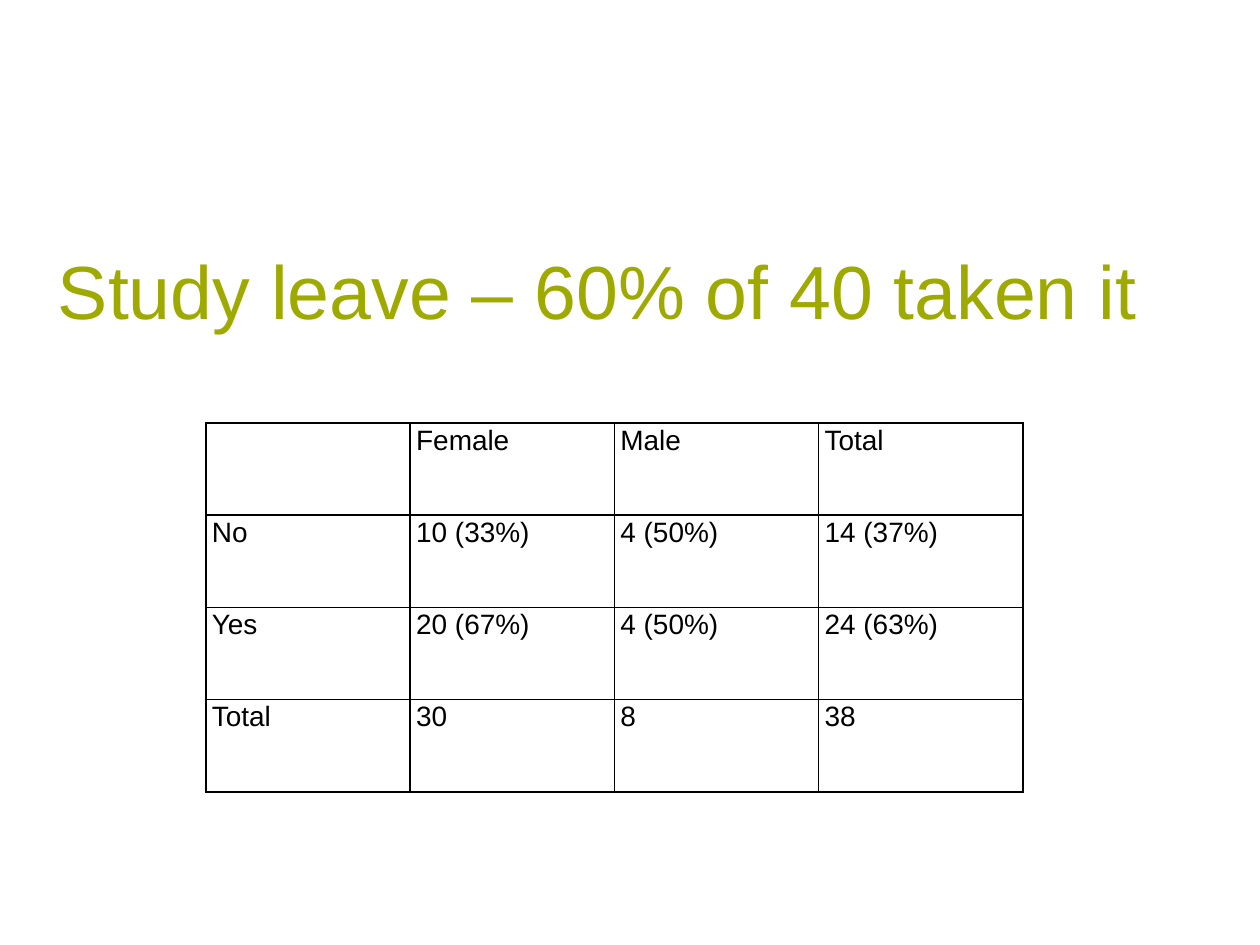
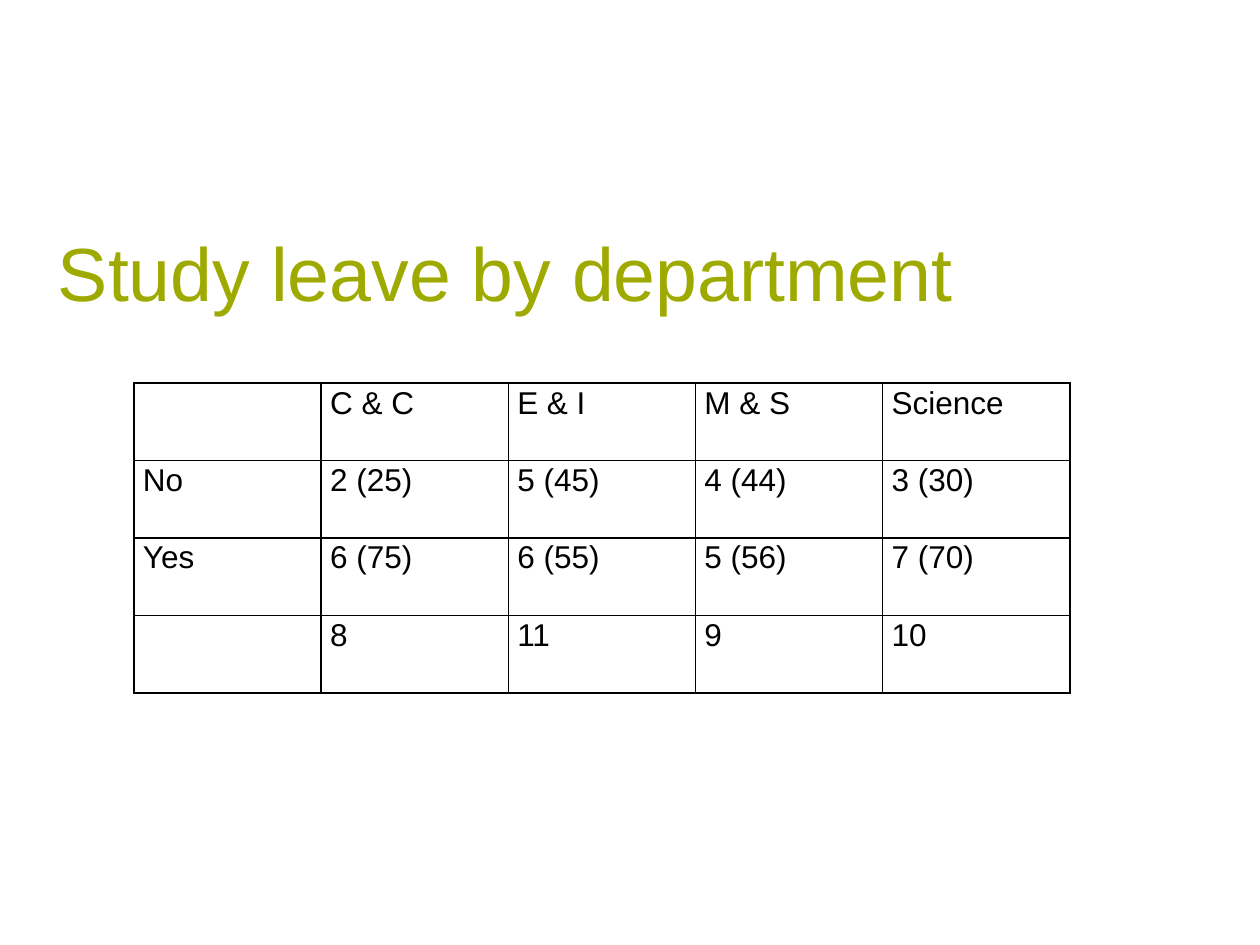
import pptx
import pptx.dml.color
import pptx.enum.text
import pptx.oxml.ns
import pptx.util
from lxml import etree

PX = 914400 / 126  # EMU in one px
FONT = "Arial"
GREEN = "9FAA00"
BLACK = "000000"
BORDER_WIDTH = 1  # points


def px(length):
    return pptx.util.Emu(round(length * PX))


def color(hex_string):
    return pptx.dml.color.RGBColor.from_string(hex_string)


def write(text_frame, text, size, ink, line_spacing=None):
    paragraph = text_frame.paragraphs[0]
    if line_spacing:
        paragraph.line_spacing = line_spacing
    run = paragraph.add_run()
    run.text = text
    run.font.name = FONT
    run.font.size = pptx.util.Pt(size)
    run.font.color.rgb = color(ink)


def set_borders(cell, ink):
    properties = cell._tc.get_or_add_tcPr()
    for side in ("a:lnL", "a:lnR", "a:lnT", "a:lnB"):
        line = etree.SubElement(properties, pptx.oxml.ns.qn(side),
                                w=str(pptx.util.Pt(BORDER_WIDTH)))
        fill = etree.SubElement(line, pptx.oxml.ns.qn("a:solidFill"))
        etree.SubElement(fill, pptx.oxml.ns.qn("a:srgbClr"), val=ink)


class Deck:
    def __init__(self):
        self.presentation = pptx.Presentation()
        self.presentation.slide_width = px(1260)
        self.presentation.slide_height = px(945)
        self.slide = None

    def new_slide(self):
        blank = self.presentation.slide_layouts[6]
        self.slide = self.presentation.slides.add_slide(blank)

    def title(self, text, top):
        box = self.slide.shapes.add_textbox(px(48), px(top), px(1134), px(101))
        frame = box.text_frame
        frame.word_wrap = True
        frame.vertical_anchor = pptx.enum.text.MSO_ANCHOR.MIDDLE
        frame.margin_left = frame.margin_right = px(10)
        frame.margin_top = frame.margin_bottom = px(5)
        write(frame, text, 43, GREEN)

    def table(self, rows, left, top, width, height, size, margin):
        row_count, column_count = len(rows), len(rows[0])
        table = self.slide.shapes.add_table(
            row_count, column_count, px(left), px(top), px(width), px(height)).table
        table.first_row = table.horz_banding = False
        for column in table.columns:
            column.width = px(width / column_count)
        for row in table.rows:
            row.height = px(height / row_count)
        for row_index, row_values in enumerate(rows):
            for column_index, value in enumerate(row_values):
                cell = table.cell(row_index, column_index)
                cell.margin_left = cell.margin_right = px(margin)
                cell.margin_top = cell.margin_bottom = 0
                set_borders(cell, BLACK)
                cell.fill.background()
                if value:
                    write(cell.text_frame, value, size, BLACK, line_spacing=1.07)


def main():
    deck = Deck()

    # Study leave by gender
    deck.new_slide()
    deck.title("Study leave – 60% of 40 taken it", top=239)
    deck.table([
        ["", "Female", "Male", "Total"],
        ["No", "10 (33%)", "4 (50%)", "14 (37%)"],
        ["Yes", "20 (67%)", "4 (50%)", "24 (63%)"],
        ["Total", "30", "8", "38"],
    ], left=206, top=423, width=817, height=369, size=16, margin=6)

    # Study leave by department
    deck.new_slide()
    deck.title("Study leave by department", top=221)
    deck.table([
        ["", "C & C", "E & I", "M & S", "Science"],
        ["No", "2 (25)", "5 (45)", "4 (44)", "3 (30)"],
        ["Yes", "6 (75)", "6 (55)", "5 (56)", "7 (70)"],
        ["", "8", "11", "9", "10"],
    ], left=134, top=383, width=936, height=310, size=18, margin=9)

    deck.presentation.save("out.pptx")


if __name__ == "__main__":
    main()
